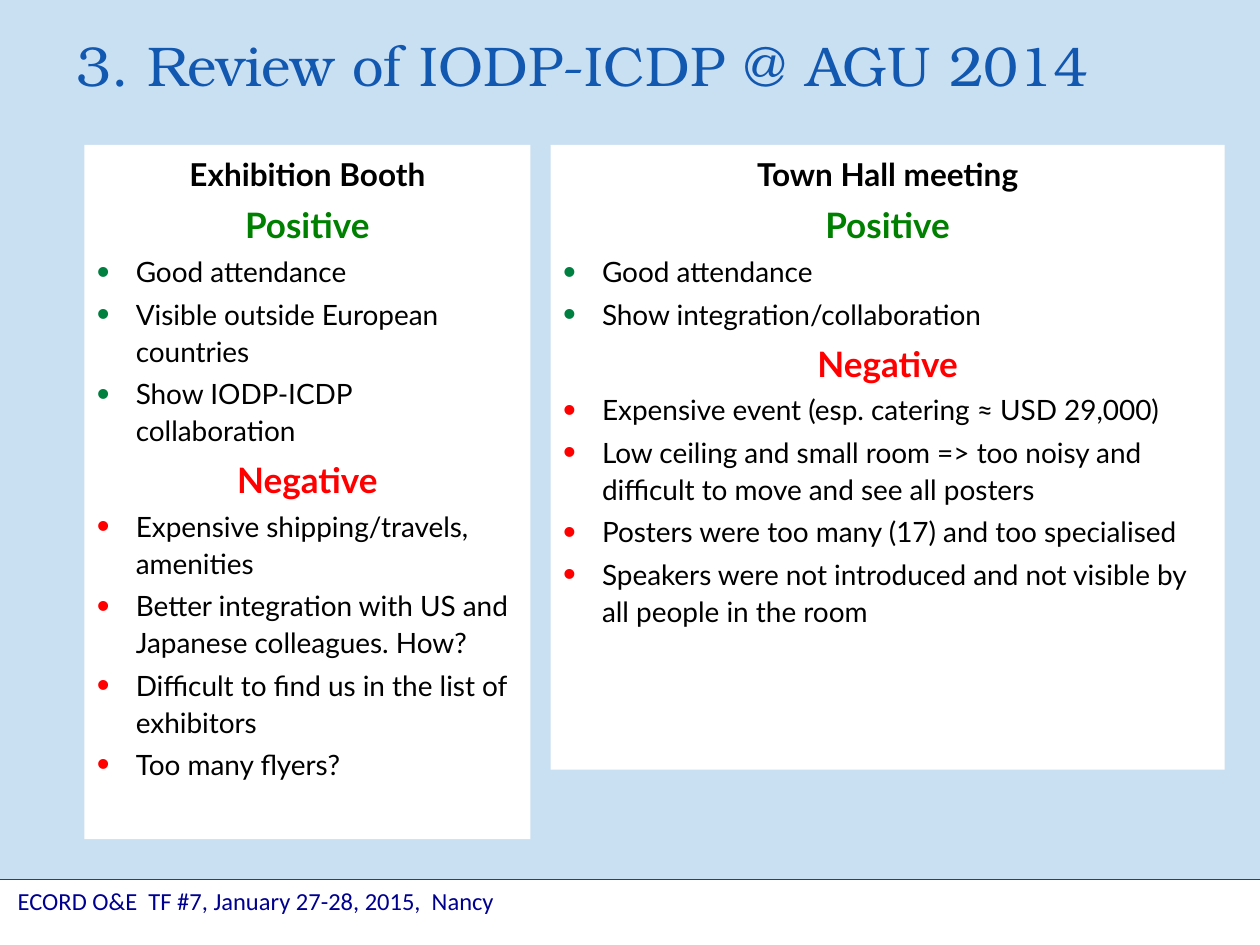
from dataclasses import dataclass

from lxml.etree import SubElement
from pptx import Presentation
from pptx.dml.color import RGBColor
from pptx.enum.shapes import MSO_SHAPE
from pptx.enum.text import MSO_ANCHOR, MSO_AUTO_SIZE, PP_ALIGN
from pptx.oxml.ns import qn
from pptx.shapes.autoshape import Shape
from pptx.slide import Slide
from pptx.text.text import TextFrame
from pptx.util import Inches, Pt


@dataclass(frozen=True)
class Theme:
    background: str = "C9E0F2"
    panel: str = "FFFFFF"
    ink: str = "000000"
    title: str = "1258B1"
    footer: str = "000090"
    rule: str = "333399"
    positive: str = "008000"
    positive_bullet: str = "008040"
    negative: str = "FF0000"
    title_size: int = 32
    verdict_size: int = 20
    heading_size: int = 18
    body_size: int = 16
    footer_size: int = 14
    title_font: str = "TeX Gyre Bonum"
    body_font: str = "Lato"
    footer_font: str = "Calibri"


@dataclass(frozen=True)
class Review:
    heading: str
    left: float
    width: float
    height: float
    positives: tuple[str, ...]
    negatives: tuple[str, ...]


THEME = Theme()
PANEL_TOP = 1.15
BULLET_INDENT = 0.31

REVIEWS = (
    Review(
        "Exhibition Booth", 0.67, 3.54, 5.51,
        ("Good attendance",
         "Visible outside European countries",
         "Show IODP-ICDP collaboration"),
        ("Expensive shipping/travels, amenities",
         "Better integration with US and Japanese colleagues. How?",
         "Difficult to find us in the list of exhibitors",
         "Too many flyers?"),
    ),
    Review(
        "Town Hall meeting", 4.37, 5.35, 4.96,
        ("Good attendance",
         "Show integration/collaboration"),
        ("Expensive event (esp. catering ≈ USD 29,000)",
         "Low ceiling and small room => too noisy and difficult to move and see all posters",
         "Posters were too many (17) and too specialised",
         "Speakers were not introduced and not visible by all people in the room"),
    ),
)


def write(frame: TextFrame, text: str, *, size: int = THEME.body_size,
          font: str = THEME.body_font, color: str = THEME.ink, bold: bool = False,
          align: PP_ALIGN = PP_ALIGN.LEFT, spacing: float = 1.1,
          before: float = 0.2, bullet: str | None = None) -> None:
    """Add a formatted paragraph, using the first one while it is empty."""
    first = frame.paragraphs[0]
    paragraph = frame.add_paragraph() if first.runs else first
    paragraph.alignment = align
    paragraph.line_spacing = spacing
    paragraph.space_before = Pt(size * before)
    run = paragraph.add_run()
    run.text = text
    run.font.size = Pt(size)
    run.font.name = font
    run.font.bold = bold
    run.font.color.rgb = RGBColor.from_string(color)
    if bullet:
        properties = paragraph._p.get_or_add_pPr()
        properties.set("marL", str(Inches(BULLET_INDENT)))
        properties.set("indent", str(-Inches(BULLET_INDENT)))
        bullet_color = SubElement(properties, qn("a:buClr"))
        SubElement(bullet_color, qn("a:srgbClr"), val=bullet)
        SubElement(properties, qn("a:buSzPct"), val="130000")
        SubElement(properties, qn("a:buFont"), typeface="Arial")
        SubElement(properties, qn("a:buChar"), char="•")


def add_panel(slide: Slide, left: float, top: float, width: float, height: float) -> Shape:
    """Draw a plain white rectangle with top-anchored text."""
    panel = slide.shapes.add_shape(
        MSO_SHAPE.RECTANGLE, Inches(left), Inches(top), Inches(width), Inches(height))
    panel.shadow.inherit = False
    panel.fill.solid()
    panel.fill.fore_color.rgb = RGBColor.from_string(THEME.panel)
    panel.line.fill.background()
    panel.text_frame.word_wrap = True
    panel.text_frame.vertical_anchor = MSO_ANCHOR.TOP
    return panel


def add_title(slide: Slide, text: str) -> None:
    """Place and fill the title placeholder."""
    title = slide.shapes.title
    title.left, title.top = Inches(0.51), Inches(0.25)
    title.width, title.height = Inches(9.13), Inches(0.59)
    title.text_frame.auto_size = MSO_AUTO_SIZE.NONE
    title.text_frame.vertical_anchor = MSO_ANCHOR.MIDDLE
    write(title.text_frame, text, size=THEME.title_size, font=THEME.title_font,
          color=THEME.title, spacing=0.9)


def add_review(slide: Slide, review: Review) -> None:
    """Draw a panel listing the positive and negative points of an event."""
    frame = add_panel(slide, review.left, PANEL_TOP, review.width, review.height).text_frame
    write(frame, review.heading, size=THEME.heading_size, bold=True, align=PP_ALIGN.CENTER)
    for verdict, color, bullet, points in (
        ("Positive", THEME.positive, THEME.positive_bullet, review.positives),
        ("Negative", THEME.negative, THEME.negative, review.negatives),
    ):
        write(frame, verdict, size=THEME.verdict_size, color=color, bold=True,
              align=PP_ALIGN.CENTER)
        for point in points:
            write(frame, point, bullet=bullet)


def add_footer(slide: Slide, text: str) -> None:
    """Draw the outlined footer band with the meeting details."""
    footer = add_panel(slide, -0.35, 6.98, 10.71, 0.98)
    footer.line.color.rgb = RGBColor.from_string(THEME.rule)
    footer.line.width = Pt(0.75)
    footer.text_frame.margin_left = Inches(0.49)
    write(footer.text_frame, text, size=THEME.footer_size, font=THEME.footer_font,
          color=THEME.footer, spacing=1.0, before=0)


def main() -> None:
    """Build and save the review slide."""
    presentation = Presentation()
    presentation.slide_width, presentation.slide_height = Inches(10), Inches(7.5)
    slide = presentation.slides.add_slide(presentation.slide_layouts[5])
    slide.background.fill.solid()
    slide.background.fill.fore_color.rgb = RGBColor.from_string(THEME.background)
    add_title(slide, "3. Review of IODP-ICDP @ AGU 2014")
    add_footer(slide, "ECORD O&E  TF #7, January 27-28, 2015,  Nancy")
    for review in REVIEWS:
        add_review(slide, review)
    presentation.save("out.pptx")


if __name__ == "__main__":
    main()
